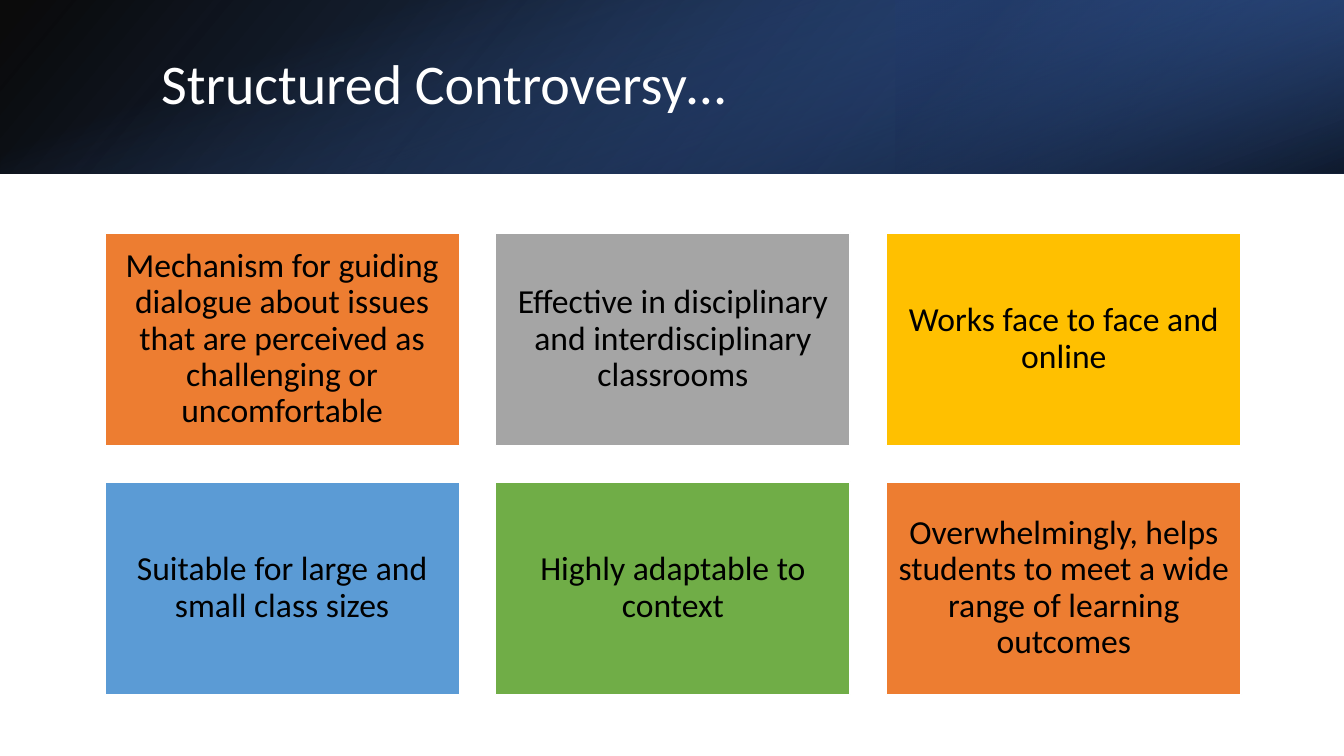
from pptx import Presentation, util as u
from pptx.dml.color import RGBColor
from pptx.enum import shapes, text
from pptx.oxml import parse_xml
from pptx.oxml.ns import nsdecls, qn

BAND_LAYERS = [
    dict(left=0, width=1, rot=0, flip=True, angle=140,
         stops=[(0, "000000", 96), (100, "2F5597", 100)]),
    dict(left=2 / 3, width=1 / 3, rot=180, flip=True, angle=320,
         stops=[(19, "203864", 68), (100, "4472C4", 79)]),
    dict(left=0, width=1, rot=90, flip=False, angle=340,
         stops=[(23, "4472C4", 0), (99, "000000", 74)]),
]
CARDS = [
    ("Mechanism for guiding dialogue about issues that are perceived as "
     "challenging or uncomfortable", "ED7D31"),
    ("Effective in disciplinary and interdisciplinary classrooms", "A5A5A5"),
    ("Works face to face and online", "FFC000"),
    ("Suitable for large and small class sizes", "5B9BD5"),
    ("Highly adaptable to context", "70AD47"),
    ("Overwhelmingly, helps students to meet a wide range of learning outcomes", "ED7D31"),
]


def rgb(value):
    return RGBColor.from_string(value)


def add_rect(s, x, y, w, h):
    sp = s.shapes.add_shape(shapes.MSO_SHAPE.RECTANGLE, *map(u.Inches, (x, y, w, h)))
    sp.shadow.inherit = False
    return sp


def set_gradient(sp, stops, angle):
    sp.fill.background()
    gs = "".join(
        f'<a:gs pos="{pos * 1000}"><a:srgbClr val="{rgb(color)}">'
        f'<a:alpha val="{alpha * 1000}"/></a:srgbClr></a:gs>'
        for pos, color, alpha in stops)
    grad = parse_xml(
        f'<a:gradFill {nsdecls("a")} rotWithShape="1"><a:gsLst>{gs}</a:gsLst>'
        f'<a:lin ang="{angle * 60000}" scaled="0"/></a:gradFill>')
    sppr = sp._element.spPr
    sppr.replace(sppr.find(qn("a:noFill")), grad)


def set_text(sp, words, size, color, align):
    tf = sp.text_frame
    tf.word_wrap = True
    tf.vertical_anchor = text.MSO_ANCHOR.MIDDLE
    p = tf.paragraphs[0]
    p.text = words
    p.alignment = align
    p.line_spacing = 0.9
    p.font.name = "Calibri"
    p.font.size = u.Pt(size)
    p.font.color.rgb = rgb(color)
    return tf


def add_header(s, x, y, w, h):
    for layer in BAND_LAYERS:
        lx, lw = x + w * layer["left"], w * layer["width"]
        if layer["rot"] == 90:
            sp = add_rect(s, lx + (lw - h) / 2, y + (h - lw) / 2, h, lw)
        else:
            sp = add_rect(s, lx, y, lw, h)
        sp.rotation = layer["rot"]
        if layer["flip"]:
            sp._element.spPr.xfrm.set("flipH", "1")
        set_gradient(sp, layer["stops"], layer["angle"])
        sp.line.fill.background()
    title = s.shapes.add_textbox(*map(u.Inches, (x + 1.5, y + 0.38, 10.98, 0.96)))
    set_text(title, "Structured Controversy…", 40, "FFFFFF", text.PP_ALIGN.LEFT)


def add_cards(s, x, y, w, h, cols=3, rows=2, gap=0.36):
    cw, ch = (w - gap * (cols - 1)) / cols, (h - gap * (rows - 1)) / rows
    for i, (words, color) in enumerate(CARDS):
        row, col = divmod(i, cols)
        sp = add_rect(s, x + col * (cw + gap), y + row * (ch + gap), cw, ch)
        sp.fill.solid()
        sp.fill.fore_color.rgb = rgb(color)
        sp.line.color.rgb = rgb("FFFFFF")
        sp.line.width = u.Pt(1)
        tf = set_text(sp, words, 24, "000000", text.PP_ALIGN.CENTER)
        tf.margin_left = tf.margin_right = tf.margin_top = tf.margin_bottom = u.Inches(0.1)


def main():
    prs = Presentation()
    prs.slide_width, prs.slide_height = u.Inches(13.33), u.Inches(7.5)
    s = prs.slides.add_slide(prs.slide_layouts[6])
    add_header(s, 0, 0, 13.33, 1.72)
    add_cards(s, 1.04, 2.31, 11.27, 4.58)
    prs.save("out.pptx")


if __name__ == "__main__":
    main()
